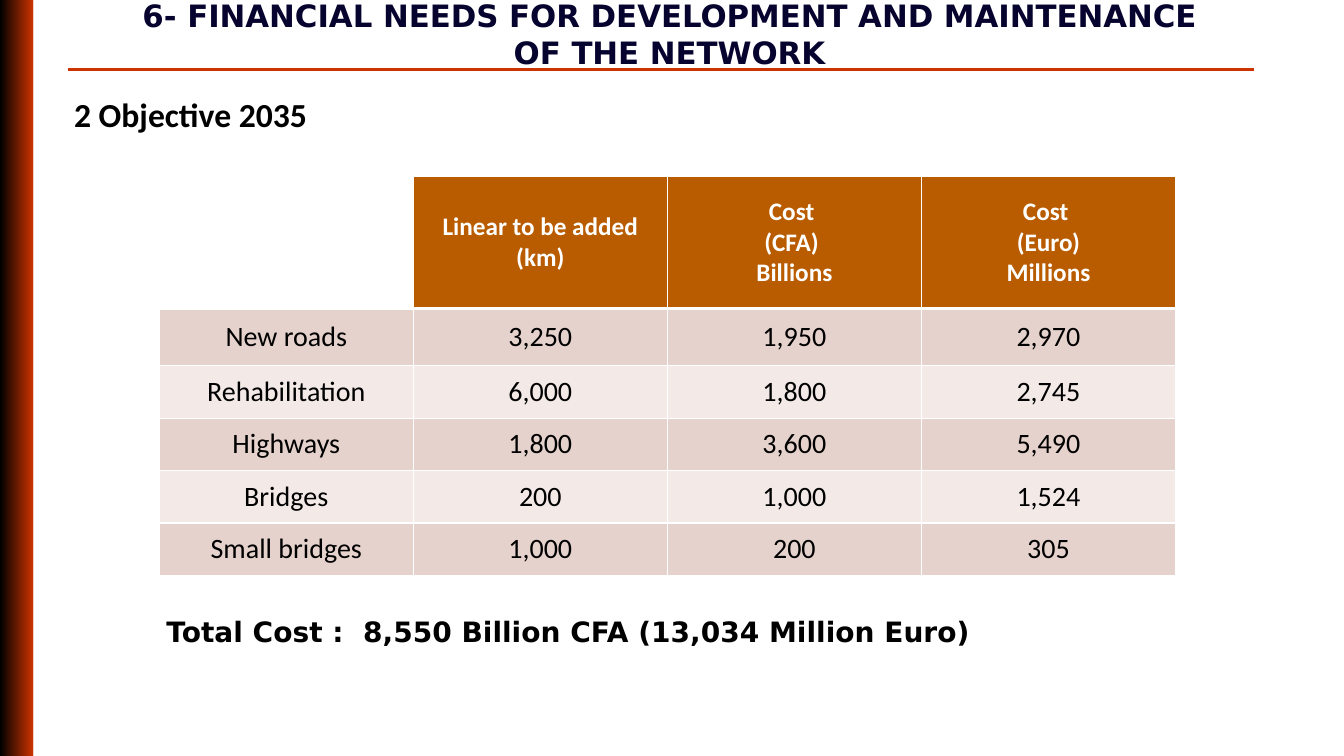
from lxml import etree
from pptx import Presentation
from pptx.dml.color import RGBColor
from pptx.enum import shapes, text
from pptx.oxml import ns
from pptx.util import Inches, Pt

BLACK = RGBColor(0x00, 0x00, 0x00)
WHITE = RGBColor(0xFF, 0xFF, 0xFF)
RED = RGBColor(0xCC, 0x33, 0x00)
NAVY = RGBColor(0x06, 0x03, 0x2F)
BROWN = RGBColor(0xB9, 0x5C, 0x00)
ROSE = RGBColor(0xE6, 0xD2, 0xCC)
PALE = RGBColor(0xF3, 0xEA, 0xE7)

deck = Presentation()
deck.slide_width, deck.slide_height = Inches(13.33), Inches(7.5)
slide = deck.slides.add_slide(deck.slide_layouts[6])


def write(frame, lines, align, font, size, color, bold):
    frame.text = "\n".join(lines)
    for para in frame.paragraphs:
        para.alignment = align
        para.font.name, para.font.size = font, Pt(size)
        para.font.color.rgb, para.font.bold = color, bold


def edge(cell, side, width):
    props = cell._tc.get_or_add_tcPr()
    line = etree.SubElement(props, ns.qn("a:" + side), w=str(Pt(width)))
    fill = etree.SubElement(line, ns.qn("a:solidFill"))
    etree.SubElement(fill, ns.qn("a:srgbClr"), val=str(WHITE))


# Side band in three equal parts
for part in range(3):
    band = slide.shapes.add_shape(shapes.MSO_SHAPE.RECTANGLE, 0,
                                  Inches(2.5 * part), Inches(0.33), Inches(2.5))
    band.shadow.inherit = False
    band.line.fill.background()
    band.fill.gradient()
    band.fill.gradient_angle = 0
    for stop, color in zip(band.fill.gradient_stops, (BLACK, RED)):
        stop.color.rgb = color

# Rule under the title
rule = slide.shapes.add_connector(shapes.MSO_CONNECTOR.STRAIGHT, Inches(0.67),
                                  Inches(0.69), Inches(12.44), Inches(0.69))
rule.line.color.rgb, rule.line.width = RED, Pt(2.25)
etree.SubElement(rule._element.spPr, ns.qn("a:effectLst"))

# Title, subtitle and total
CENTER, JUST = text.PP_ALIGN.CENTER, text.PP_ALIGN.JUSTIFY
title = ["6- FINANCIAL NEEDS FOR DEVELOPMENT AND MAINTENANCE", "OF THE NETWORK"]
total = ["Total Cost :  8,550 Billion CFA (13,034 Million Euro)"]
notes = [
    ((0.72, -0.08, 11.84, 1.21), 0.1, 1, title, CENTER, "DejaVu Sans", 22, NAVY),
    ((0.66, 0.8, 3.03, 0.55), 0, 1.2, [" 2 Objective 2035"], JUST, "Calibri", 24, BLACK),
    ((1.65, 6.05, 9.15, 0.44), 0, 1, total, JUST, "DejaVu Sans", 20, BLACK),
]
for place, inset, space, lines, align, font, size, color in notes:
    frame = slide.shapes.add_textbox(*map(Inches, place)).text_frame
    frame.word_wrap = True
    frame.margin_left = frame.margin_right = Inches(inset)
    write(frame, lines, align, font, size, color, True)
    for para in frame.paragraphs:
        para.line_spacing = space

# Cost table
rows = [
    ("", "Linear to be added\n(km)", "Cost \n(CFA) \nBillions", "Cost \n(Euro)\nMillions"),
    ("New roads", "3,250", "1,950", "2,970"),
    ("Rehabilitation", "6,000", "1,800", "2,745"),
    ("Highways", "1,800", "3,600", "5,490"),
    ("Bridges", "200", "1,000", "1,524"),
    ("Small bridges", "1,000", "200", "305"),
]
table = slide.shapes.add_table(len(rows), 4, Inches(1.58), Inches(1.75),
                               Inches(10.08), Inches(3.97)).table
for row, high in zip(table.rows, [1.31, 0.57] + [0.52] * 4):
    row.height = Inches(high)
for r, row in enumerate(rows):
    for c, label in enumerate(row):
        cell = table.cell(r, c)
        cell.vertical_anchor = text.MSO_ANCHOR.MIDDLE
        head = r == 0
        write(cell.text_frame, label.split("\n"), CENTER, "Calibri",
              18 if head else 20, WHITE if head else BLACK, head)
        # Borders come before the fill in the cell properties
        for side in ("lnL", "lnR", "lnT", "lnB"):
            thick = (head and side == "lnB") or (r == 1 and side == "lnT")
            edge(cell, side, 3 if thick else 1)
        if label:
            cell.fill.solid()
            cell.fill.fore_color.rgb = BROWN if head else (PALE, ROSE)[r % 2]
        else:
            cell.fill.background()

deck.save("out.pptx")
